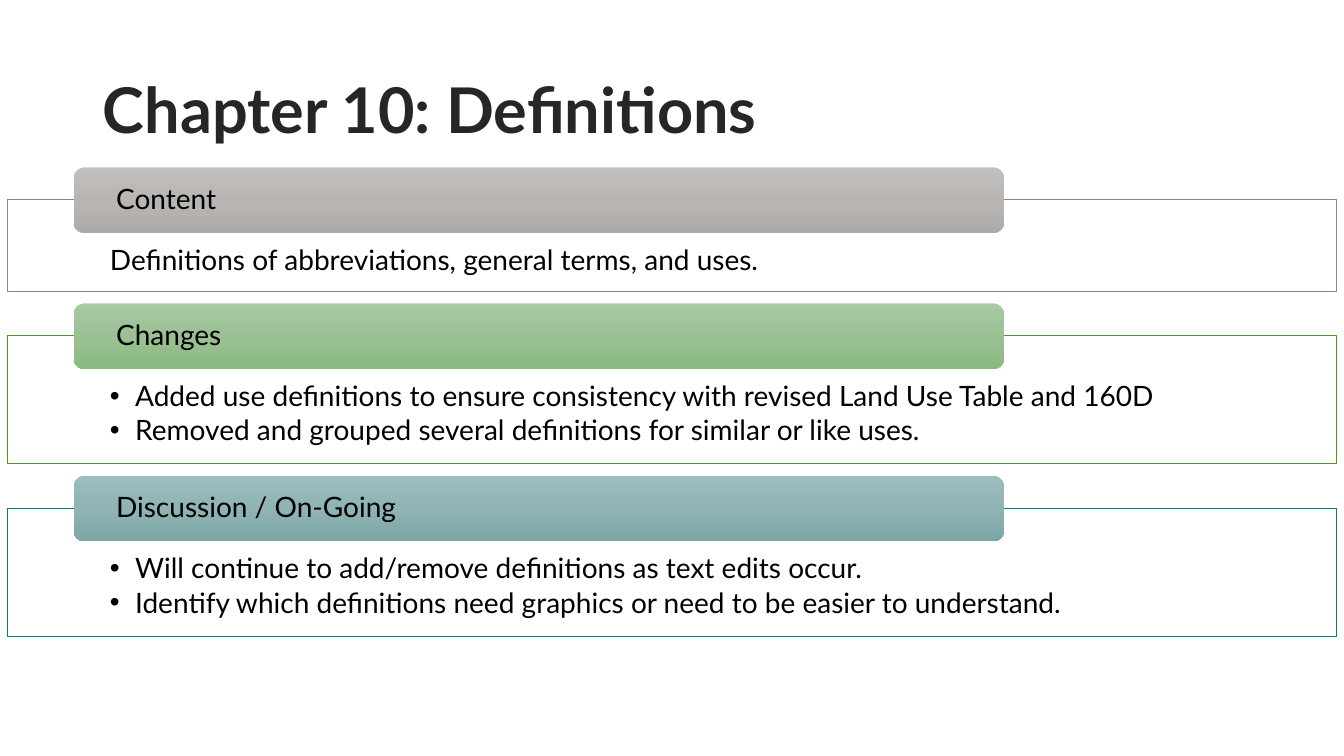
import copy
import dataclasses
import typing

import pptx
import pptx.dml.color
import pptx.enum.shapes
import pptx.enum.text
import pptx.oxml.ns
import pptx.util
from pptx.util import Inches

RGBColor = pptx.dml.color.RGBColor
BLACK = RGBColor(0x00, 0x00, 0x00)
WHITE = RGBColor(0xFF, 0xFF, 0xFF)
CHARCOAL = RGBColor(0x26, 0x26, 0x26)
GREY_LINE = RGBColor(0x8B, 0x85, 0x80)
GREY_LIGHT = RGBColor(0xC2, 0xBF, 0xBD)
GREY_MIDDLE = RGBColor(0xB8, 0xB5, 0xB2)
GREY_DARK = RGBColor(0xAE, 0xAA, 0xA7)
GREEN_LINE = RGBColor(0x4B, 0x97, 0x2F)
GREEN_LIGHT = RGBColor(0xA7, 0xCB, 0xA1)
GREEN_MIDDLE = RGBColor(0x9B, 0xC0, 0x94)
GREEN_DARK = RGBColor(0x89, 0xBA, 0x80)
TEAL_LINE = RGBColor(0x00, 0x81, 0x82)
TEAL_LIGHT = RGBColor(0x9D, 0xBD, 0xBE)
TEAL_MIDDLE = RGBColor(0x90, 0xB3, 0xB3)
TEAL_DARK = RGBColor(0x7C, 0xA7, 0xA8)

HEADER_LEFT, HEADER_WIDTH, HEADER_HEIGHT = 0.73, 9.23, 0.65
FRAME_LEFT, FRAME_WIDTH = 0.07, 13.18
FIRST_TOP, FRAME_DROP, SECTION_GAP = 1.66, 0.32, 0.12

Anchor = pptx.enum.text.MSO_ANCHOR
TITLE_FONT = {"name": "Lato", "size": pptx.util.Pt(45), "bold": True}
TEXT_FONT = {"name": "Lato", "size": pptx.util.Pt(20), "bold": False}
PARAGRAPH_FORMAT = {
    "alignment": pptx.enum.text.PP_ALIGN.LEFT,
    "line_spacing": 0.9,
    "space_before": pptx.util.Pt(0),
}
FRAME_FORMAT = {
    "word_wrap": True,
    "auto_size": pptx.enum.text.MSO_AUTO_SIZE.NONE,
}
HEADER_FORMAT = {
    "vertical_anchor": Anchor.MIDDLE,
    "margin_left": Inches(0.39),
    "margin_right": Inches(0.39),
    "margin_top": 0,
    "margin_bottom": 0,
}
BODY_FORMAT = {
    "vertical_anchor": Anchor.TOP,
    "margin_left": Inches(1.02),
    "margin_right": Inches(1.02),
    "margin_top": Inches(0.46),
    "margin_bottom": Inches(0.16),
}


@dataclasses.dataclass
class Section:
    heading: str
    lines: list[str]
    placeholder: int
    height: float
    outline: RGBColor
    gradient: tuple[RGBColor, RGBColor, RGBColor]
    bulleted: bool = True


SECTIONS = [
    Section("Content",
            ["Definitions of abbreviations, general terms, and uses."],
            1, 0.91, GREY_LINE, (GREY_LIGHT, GREY_MIDDLE, GREY_DARK), False),
    Section("Changes",
            ["Added use definitions to ensure consistency with revised Land Use Table and 160D",
             "Removed and grouped several definitions for similar or like uses."],
            2, 1.27, GREEN_LINE, (GREEN_LIGHT, GREEN_MIDDLE, GREEN_DARK)),
    Section("Discussion / On-Going",
            ["Will continue to add/remove definitions as text edits occur.",
             "Identify which definitions need graphics or need to be easier to understand."],
            4, 1.27, TEAL_LINE, (TEAL_LIGHT, TEAL_MIDDLE, TEAL_DARK)),
]


def apply(target: typing.Any, values: dict[str, typing.Any]) -> None:
    for name, value in values.items():
        setattr(target, name, value)


def place(box: typing.Any, left: float, top: float, width: float, height: float) -> None:
    apply(box, {"left": Inches(left), "top": Inches(top),
                "width": Inches(width), "height": Inches(height)})


def set_bullet(para: typing.Any, bulleted: bool) -> None:
    properties = para._p.get_or_add_pPr()
    indent = Inches(0.25) if bulleted else 0
    properties.set("marL", str(indent))
    properties.set("indent", str(-indent))
    if bulleted:
        font = properties.makeelement(pptx.oxml.ns.qn("a:buFont"), {"typeface": "Arial"})
        mark = properties.makeelement(pptx.oxml.ns.qn("a:buChar"), {"char": "•"})
        properties.extend([font, mark])
    else:
        properties.append(properties.makeelement(pptx.oxml.ns.qn("a:buNone"), {}))


def write(box: typing.Any, lines: list[str], frame_format: dict[str, typing.Any],
          font: dict[str, typing.Any], color: RGBColor, space_after: float = 0,
          bulleted: bool = False) -> None:
    frame = box.text_frame
    apply(frame, FRAME_FORMAT | frame_format)
    for index, line in enumerate(lines):
        para = frame.paragraphs[0] if index == 0 else frame.add_paragraph()
        set_bullet(para, bulleted)
        apply(para, PARAGRAPH_FORMAT | {"space_after": pptx.util.Pt(space_after)})
        span = para.add_run()
        span.text = line
        apply(span.font, font)
        span.font.color.rgb = color


def fill_gradient(box: typing.Any, colors: tuple[RGBColor, RGBColor, RGBColor]) -> None:
    box.fill.gradient()
    box.fill.gradient_angle = 270
    stop_list = box._element.spPr.find(".//" + pptx.oxml.ns.qn("a:gsLst"))
    stop_list.insert(1, copy.deepcopy(stop_list[0]))
    for stop, color, position in zip(box.fill.gradient_stops, colors, (0, 0.5, 1)):
        stop.color.rgb = color
        stop.position = position


def draw_body(page: typing.Any, section: Section, top: float) -> None:
    box = next(item for item in page.placeholders
               if item.placeholder_format.idx == section.placeholder)
    place(box, FRAME_LEFT, top, FRAME_WIDTH, section.height)
    box.fill.solid()
    box.fill.fore_color.rgb = WHITE
    color = box._element.spPr.find(".//" + pptx.oxml.ns.qn("a:srgbClr"))
    color.append(color.makeelement(pptx.oxml.ns.qn("a:alpha"), {"val": "90000"}))
    box.line.color.rgb = section.outline
    box.line.width = pptx.util.Pt(0.5)
    write(box, section.lines, BODY_FORMAT, TEXT_FONT, BLACK, 3, section.bulleted)


def draw_header(page: typing.Any, section: Section, top: float) -> None:
    box = page.shapes.add_shape(
        pptx.enum.shapes.MSO_SHAPE.ROUNDED_RECTANGLE, Inches(HEADER_LEFT),
        Inches(top), Inches(HEADER_WIDTH), Inches(HEADER_HEIGHT))
    box.shadow.inherit = False
    box.line.fill.background()
    fill_gradient(box, section.gradient)
    write(box, [section.heading], HEADER_FORMAT, TEXT_FONT, BLACK)


def main() -> None:
    deck = pptx.Presentation()
    deck.slide_width, deck.slide_height = Inches(13.33), Inches(7.5)
    page = deck.slides.add_slide(deck.slide_layouts.get_by_name("Comparison"))
    title = page.shapes.title
    place(title, 0.92, 0.4, 11.5, 1.45)
    write(title, ["Chapter 10: Definitions"], {"vertical_anchor": Anchor.MIDDLE},
          TITLE_FONT, CHARCOAL)

    top = FIRST_TOP
    for section in SECTIONS:
        draw_body(page, section, top + FRAME_DROP)
        draw_header(page, section, top)
        top += FRAME_DROP + section.height + SECTION_GAP

    for box in list(page.placeholders):
        if not box.text_frame.text:
            box._element.getparent().remove(box._element)
    deck.save("out.pptx")


if __name__ == "__main__":
    main()
